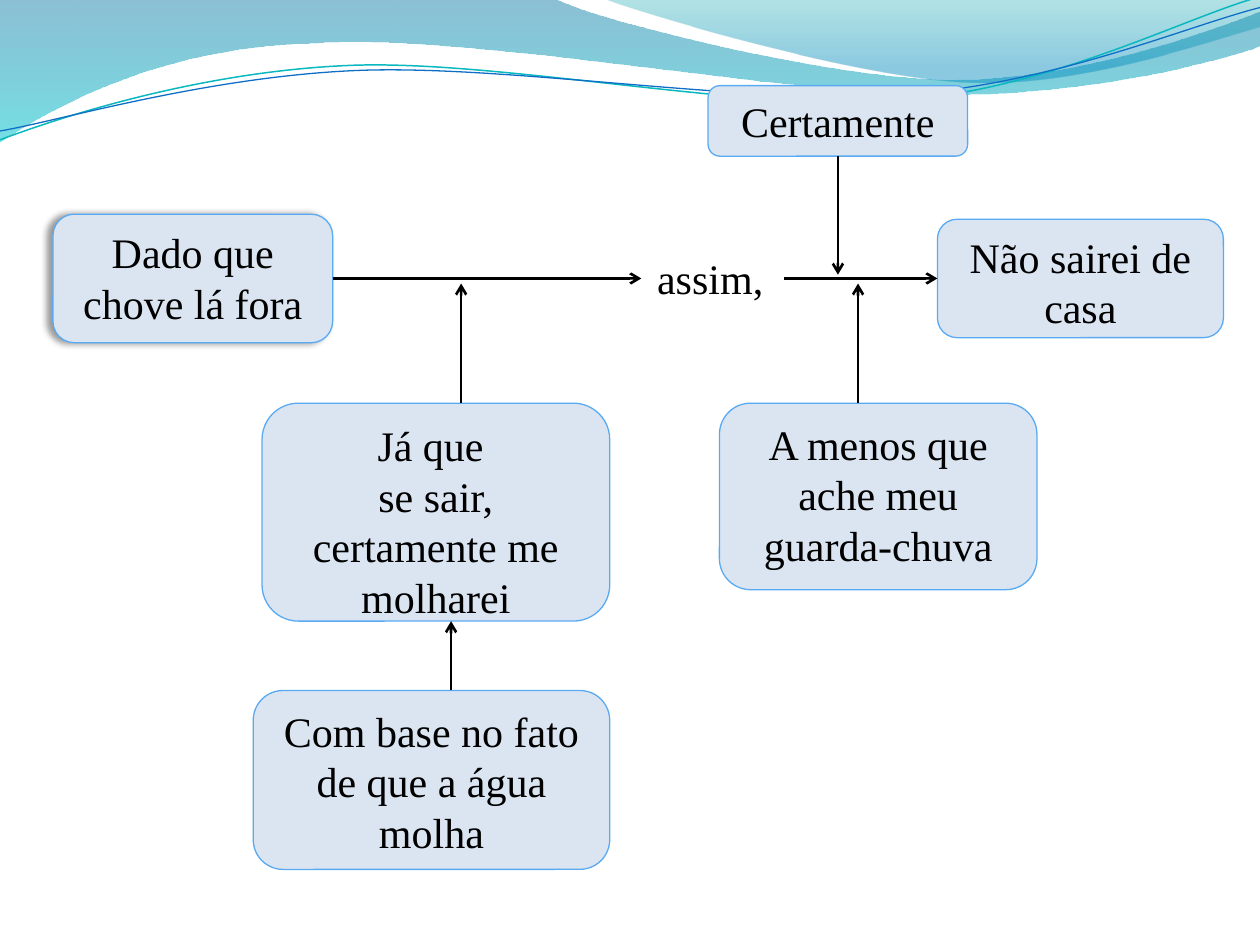
from dataclasses import dataclass

from lxml.etree import SubElement
from pptx import Presentation
from pptx.dml.color import RGBColor
from pptx.enum.shapes import MSO_CONNECTOR, MSO_SHAPE
from pptx.enum.text import MSO_ANCHOR, PP_ALIGN
from pptx.oxml.ns import qn
from pptx.util import Inches, Pt


@dataclass(frozen=True)
class Theme:
    font: str = "Times New Roman"
    size: float = 24
    ink: str = "000000"
    box: str = "DBE5F1"
    edge: str = "59AAF2"
    thin: float = 0.75
    bold: float = 1.5


THEME = Theme()
TOP, LEFT, BOTTOM, RIGHT = range(4)

# Each curve: start point, then cubic segments (two handles, end); a pair is a straight line.
BAND = [(0, 0), (4.4, -0.01), (4.76, 0.17, 6.64, 0.63, 7.58, 0.63),
        (8.53, 0.63, 9.58, 0.26, 10, 0.09), (10.01, 0.36),
        (9.83, 0.44, 8.7, 0.76, 7.46, 0.75), (6.22, 0.75, 3.82, 0.28, 2.57, 0.34),
        (1.29, 0.36, 0.46, 0.83, -0.01, 1.13), (0, 0)]
CREST = [(4.79, -0.01), (5.09, 0.11, 6.82, 0.62, 7.69, 0.65),
         (8.56, 0.69, 9.61, 0.32, 10, 0.21), (10, 0), (4.79, -0.01)]
TEAL = [(0, 1.11), (0.48, 0.93, 1.58, 0.57, 2.77, 0.52),
        (3.95, 0.47, 5.93, 0.89, 7.13, 0.8), (8.33, 0.71, 9.38, 0.15, 9.98, -0.02)]
BLUE = [(0, 1.04), (0.47, 0.96, 1.64, 0.61, 2.83, 0.56),
        (4.03, 0.51, 5.97, 0.84, 7.17, 0.75), (8.36, 0.67, 9.41, 0.21, 10, 0.06)]

FILLS = [(BAND, [(0, "0074A1", 45), (1, "00C6CF", 55)]),
         (CREST, [(0, "00A1A9", 30), (0.8, "008BBF", 45)])]
LINES = [(TEAL, "0AB8BF", 0.85), (BLUE, "0F6FC6", 0.75)]

BOXES = {
    "data": ((0.42, 1.7, 2.22, 1.02), ["Dado que chove lá fora"]),
    "warrant": ((2.08, 3.2, 2.76, 1.73), ["Já que ", "se sair, certamente me molharei"]),
    "backing": ((2.01, 5.48, 2.83, 1.42), ["Com base no fato de que a água molha"]),
    "claim": ((7.44, 1.74, 2.27, 0.94), ["Não sairei de casa"]),
    "rebuttal": ((5.71, 3.2, 2.52, 1.48), ["A menos que ache meu guarda-chuva"]),
    "modal": ((5.62, 0.68, 2.06, 0.56), ["Certamente"]),
}
SO_BOX = (5.09, 1.93, 1.13, 0.56)

# Ends, then the (box, side) joined at each end.
ARROWS = [
    ((2.64, 2.21), (5.09, 2.21), ("data", RIGHT), ("so", LEFT)),
    ((6.22, 2.21), (7.44, 2.21), ("so", RIGHT), ("claim", LEFT)),
    ((6.65, 1.24), (6.65, 2.18), ("modal", BOTTOM), None),
    ((3.66, 3.2), (3.66, 2.25), None, None),
    ((3.58, 5.48), (3.58, 4.93), None, None),
    ((6.81, 3.2), (6.81, 2.25), None, None),
]


def rgb(code):
    return RGBColor.from_string(code)


def add_curve(slide, curve, close):
    """Build an outline through the end points, then bend its cubic segments."""
    first, *rest = [(Inches(part[-2]), Inches(part[-1])) for part in curve]
    pen = slide.shapes.build_freeform(*first)
    pen.add_line_segments(rest, close=close)
    shape = pen.convert_to_shape()
    shape.shadow.inherit = False
    edges = list(shape._element.iter(qn("a:lnTo")))
    for edge, part in zip(edges, curve[1:]):
        if len(part) == 2:
            continue
        bend = SubElement(edge.getparent(), qn("a:cubicBezTo"))
        edge.getparent().replace(edge, bend)
        for x, y in zip(part[::2], part[1::2]):
            SubElement(bend, qn("a:pt"), x=str(Inches(x) - shape.left),
                       y=str(Inches(y) - shape.top))
    return shape


def add_waves(slide):
    for curve, stops in FILLS:
        shape = add_curve(slide, curve, True)
        shape.line.fill.background()
        shape.fill.gradient()
        shape.fill.gradient_angle = 270
        for stop, (place, color, _) in zip(shape.fill.gradient_stops, stops):
            stop.position = place
            stop.color.rgb = rgb(color)
        tags = list(shape._element.spPr.iter(qn("a:srgbClr")))
        for tag, (_, _, alpha) in zip(tags, stops):
            SubElement(tag, qn("a:alpha"), val=str(alpha * 1000))
    for curve, color, width in LINES:
        shape = add_curve(slide, curve, False)
        shape.fill.background()
        shape.line.color.rgb = rgb(color)
        shape.line.width = Pt(width)


def add_box(slide, box, lines, align=PP_ALIGN.CENTER, plain=False):
    shape = slide.shapes.add_shape(MSO_SHAPE.ROUNDED_RECTANGLE, *map(Inches, box))
    shape.shadow.inherit = False
    if plain:
        shape.fill.background()
        shape.line.fill.background()
    else:
        shape.fill.solid()
        shape.fill.fore_color.rgb = rgb(THEME.box)
        shape.line.color.rgb = rgb(THEME.edge)
        shape.line.width = Pt(THEME.thin)
    frame = shape.text_frame
    frame.word_wrap = True
    frame.vertical_anchor = MSO_ANCHOR.TOP
    for i, line in enumerate(lines):
        para = frame.add_paragraph() if i else frame.paragraphs[0]
        para.alignment = align
        run = para.add_run()
        run.text = line
        run.font.name = THEME.font
        run.font.size = Pt(THEME.size)
        run.font.color.rgb = rgb(THEME.ink)
    return shape


def add_shade(shape):
    """Cast a soft shadow to the left."""
    effects = shape._element.spPr.find(qn("a:effectLst"))
    shade = SubElement(effects, qn("a:outerShdw"), blurRad=str(Pt(4)), dist=str(Pt(3)),
                       dir="10800000", algn="r", rotWithShape="0")
    color = SubElement(shade, qn("a:srgbClr"), val=THEME.ink)
    SubElement(color, qn("a:alpha"), val="40000")


def add_arrow(slide, start, end, shapes, tail, head):
    line = slide.shapes.add_connector(MSO_CONNECTOR.STRAIGHT, *map(Inches, start + end))
    if tail:
        line.begin_connect(shapes[tail[0]], tail[1])
    if head:
        line.end_connect(shapes[head[0]], head[1])
    line.line.color.rgb = rgb(THEME.ink)
    line.line.width = Pt(THEME.bold)
    SubElement(line.line._get_or_add_ln(), qn("a:tailEnd"), type="arrow")
    SubElement(line._element.spPr, qn("a:effectLst"))


def add_scheme(slide):
    shapes = {name: add_box(slide, *parts) for name, parts in BOXES.items()}
    shapes["so"] = add_box(slide, SO_BOX, ["assim,"], PP_ALIGN.LEFT, plain=True)
    add_shade(shapes["data"])
    for start, end, tail, head in ARROWS:
        add_arrow(slide, start, end, shapes, tail, head)


def main():
    deck = Presentation()
    deck.slide_width, deck.slide_height = Inches(10), Inches(7.5)
    slide = deck.slides.add_slide(deck.slide_layouts[6])
    add_waves(slide)
    add_scheme(slide)
    deck.save("out.pptx")


if __name__ == "__main__":
    main()
